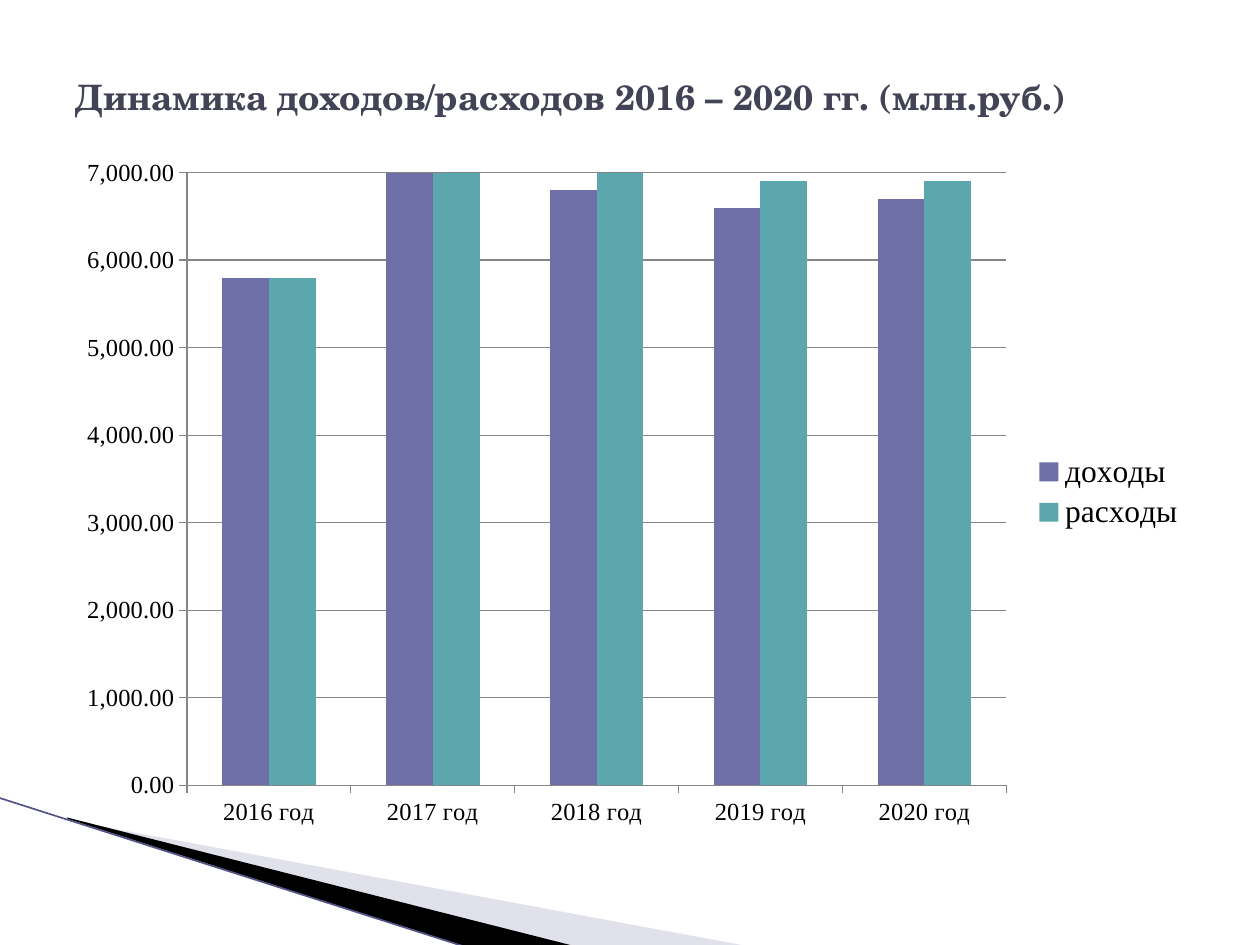
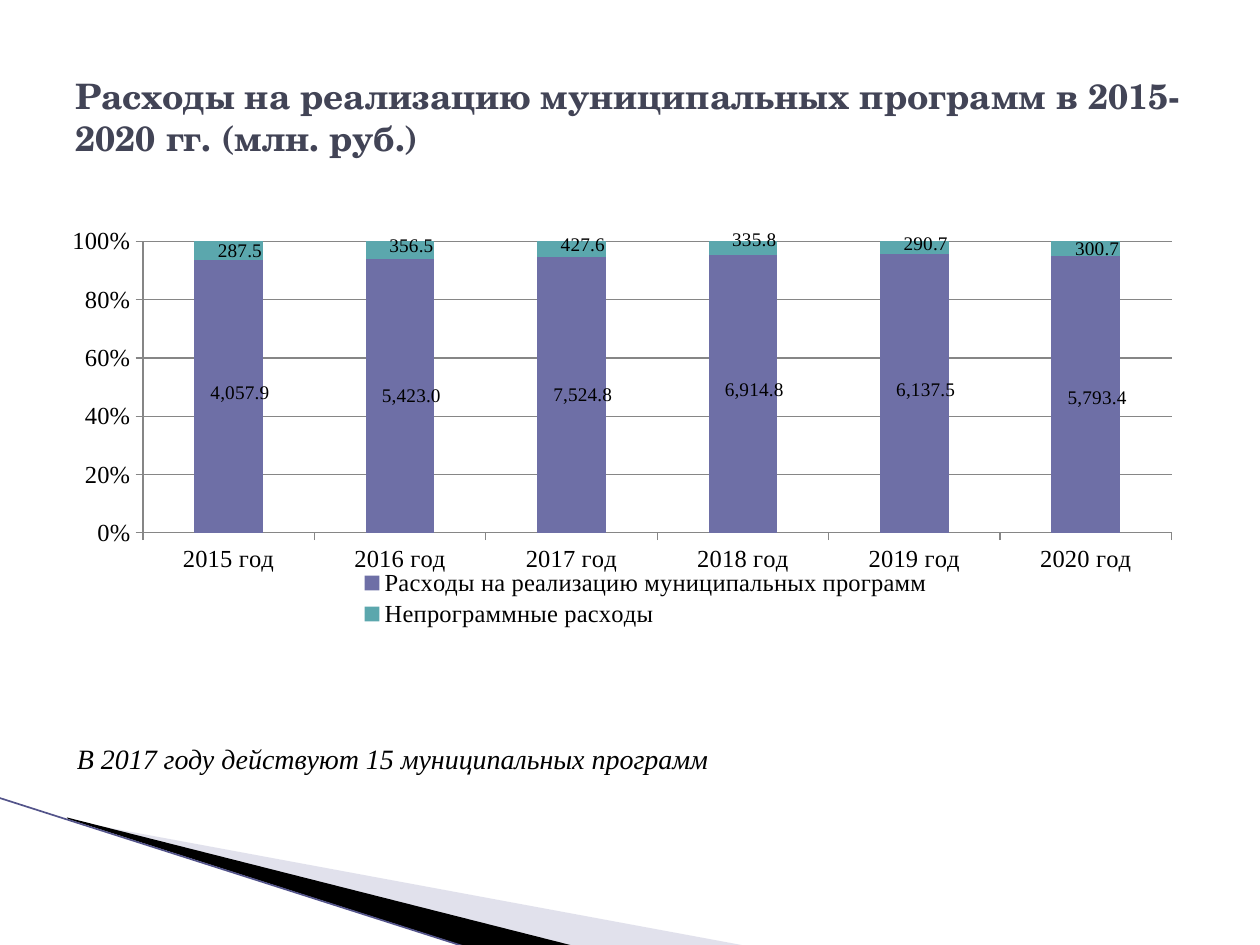
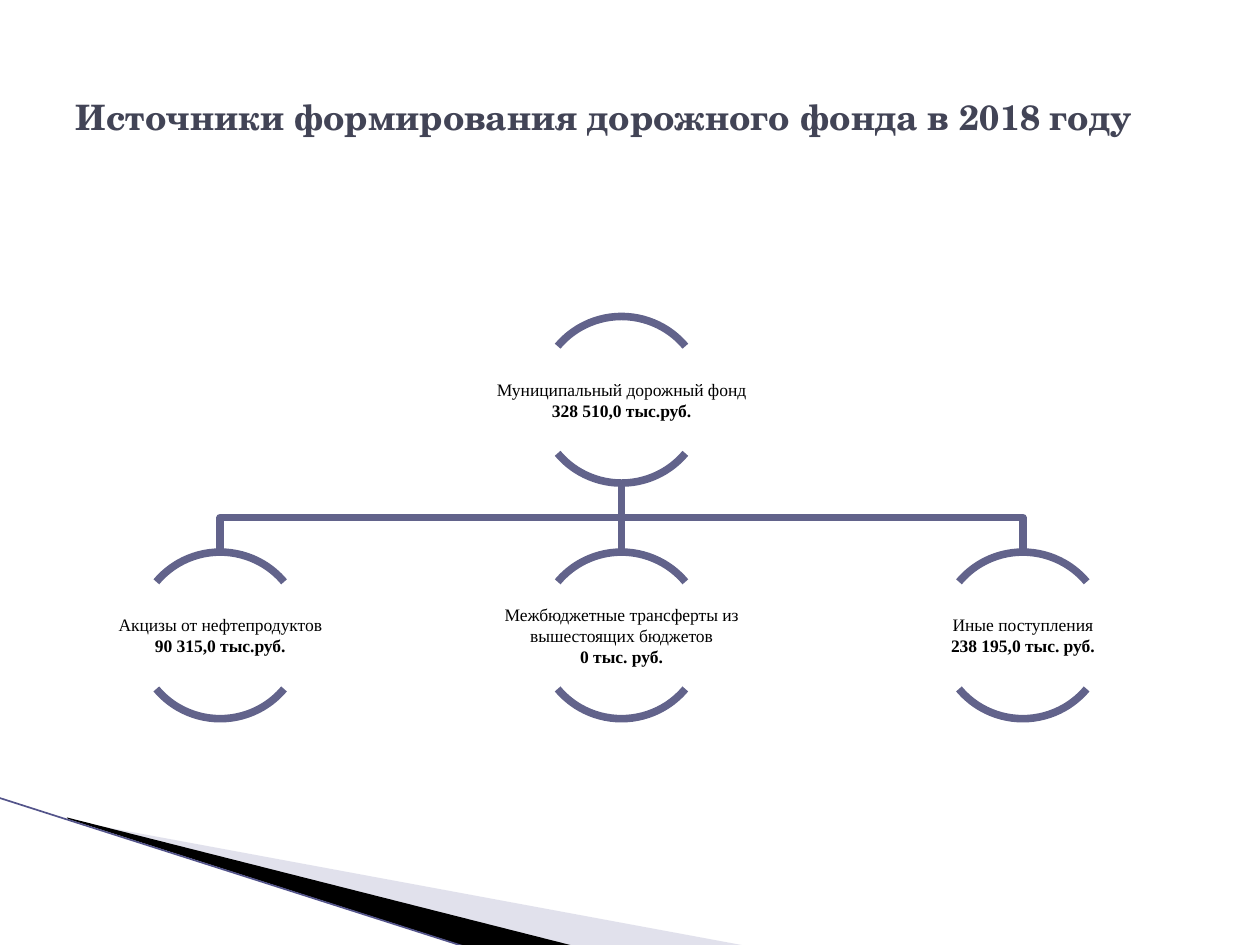
from dataclasses import dataclass
from lxml import etree
from pptx import Presentation
from pptx import util as u
from pptx.chart.data import CategoryChartData
from pptx.dml.color import RGBColor
from pptx.enum import chart as ch, shapes, text
from pptx.oxml import parse_xml
from pptx.oxml.ns import nsdecls, qn


@dataclass(frozen=True)
class Theme:
    head: str = "TeX Gyre Schola"
    body: str = "Times New Roman"
    title: RGBColor = RGBColor(0x42, 0x44, 0x56)
    ink: RGBColor = RGBColor(0, 0, 0)
    bars: tuple = (RGBColor(0x6E, 0x6F, 0xA6), RGBColor(0x5B, 0xA7, 0xAD))
    grid: RGBColor = RGBColor(0x86, 0x86, 0x86)
    tree: RGBColor = RGBColor(0x62, 0x63, 0x8B)
    pale: RGBColor = RGBColor(0xB6, 0xB6, 0xD1)
    edge: RGBColor = RGBColor(0x53, 0x54, 0x8A)
    big: int = 20
    key: int = 18
    note: int = 16
    axis: int = 14
    label: int = 11
    small: int = 10


T = Theme()
Cm, Pt = u.Cm, u.Pt


def style(font, size, color=T.ink, **more):
    form = {"name": T.body, "size": Pt(size), "bold": False, "italic": False} | more
    for key, val in form.items():
        setattr(font, key, val)
    font.color.rgb = color


def place(x, y, w, h):
    """Layout of a chart part, in shares of the chart."""
    vals = {"x": x, "y": y, "w": w, "h": h}
    parts = "".join(f'<c:{k}Mode val="edge"/>' for k in "xy")
    parts += "".join(f'<c:{k} val="{v}"/>' for k, v in vals.items())
    return parse_xml(f'<c:layout {nsdecls("c")}><c:manualLayout>{parts}'
                     "</c:manualLayout></c:layout>")


# Slides and titles
deck = Presentation()
deck.slide_width, deck.slide_height = Cm(25.4), Cm(19.05)
heads = [
    ("Динамика доходов/расходов 2016 – 2020 гг. (млн.руб.)", 22.63, 2.36),
    ("Расходы на реализацию муниципальных программ в 2015-2020 гг. (млн. руб.)", 22.86, 3.18),
    ("Источники формирования дорожного фонда в 2018 году", 22.86, 3.18),
]
pages = []
for words, wide, high in heads:
    page = deck.slides.add_slide(deck.slide_layouts[5])
    pages.append(page)
    box = page.shapes.title
    spot = {"left": Cm(1.27), "top": Cm(0.76), "width": Cm(wide), "height": Cm(high)}
    for key, val in spot.items():
        setattr(box, key, val)
    box.text_frame.text = words
    box.text_frame.vertical_anchor = text.MSO_ANCHOR.MIDDLE
    para = box.text_frame.paragraphs[0]
    para.alignment = text.PP_ALIGN.LEFT
    style(para.runs[0].font, T.big, T.title, name=T.head, bold=True)

# Corner wedges, shared through the master
first = pages[0].shapes
wedges = [
    (T.pale, [(1.4, 16.54), (15.11, 19.08), (11.58, 19.08), (1.4, 16.51)]),
    (T.ink, [(1.35, 16.48), (11.61, 19.08), (9.45, 19.1), (1.37, 16.51)]),
]
decor = []
for color, spots in wedges:
    spots = [(Cm(x), Cm(y)) for x, y in spots]
    pen = first.build_freeform(*spots[0])
    pen.add_line_segments(spots[1:])
    wedge = pen.convert_to_shape()
    wedge.shadow.inherit = False
    wedge.fill.solid()
    wedge.fill.fore_color.rgb = color
    wedge.line.fill.background()
    decor.append(wedge)
tint = decor[0].element.find(".//" + qn("a:srgbClr"))
etree.SubElement(tint, qn("a:alpha"), val="40000")
edge = first.add_connector(shapes.MSO_CONNECTOR.STRAIGHT,
                           Cm(-0.03), Cm(16.08), Cm(9.42), Cm(19.1))
edge.line.color.rgb, edge.line.width = T.edge, Pt(0.95)
etree.SubElement(edge.element.spPr, qn("a:effectLst"))
decor.append(edge)
for i, part in enumerate(decor):
    part.element.find(".//" + qn("p:cNvPr")).set("id", str(20 + i))
    deck.slide_master.shapes.element.insert(2 + i, part.element)

# Charts
kinds = ch.XL_CHART_TYPE
plans = [
    {"kind": kinds.COLUMN_CLUSTERED, "at": (1.3, 2.92, 22.86, 14), "years": range(2016, 2021),
     "fmt": "#,##0.00", "step": 1000, "top": 7000, "key": T.key,
     "side": ch.XL_LEGEND_POSITION.RIGHT,
     "rows": {"доходы": (5800, 7100, 6800, 6600, 6700),
              "расходы": (5800, 8000, 7300, 6900, 6900)}},
    {"kind": kinds.COLUMN_STACKED_100, "at": (1.27, 4.45, 23.04, 8.28), "years": range(2015, 2021),
     "fmt": "0%", "step": 0.2, "top": 1, "key": T.axis,
     "side": ch.XL_LEGEND_POSITION.BOTTOM,
     "rows": {"Расходы на реализацию муниципальных программ":
              (4057.9, 5423, 7524.8, 6914.8, 6137.5, 5793.4),
              "Непрограммные расходы": (287.5, 356.5, 427.6, 335.8, 290.7, 300.7)}},
]
charts = []
for page, plan in zip(pages, plans):
    data = CategoryChartData(number_format="#,##0.0")
    data.categories = [f"{year} год" for year in plan["years"]]
    for name, vals in plan["rows"].items():
        data.add_series(name, vals)
    spot = [Cm(n) for n in plan["at"]]
    chart = page.shapes.add_chart(plan["kind"], *spot, data).chart
    charts.append(chart)
    chart.has_title = False
    style(chart.font, plan["key"])
    chart.has_legend = True
    chart.legend.position = plan["side"]
    chart.legend.include_in_layout = False
    style(chart.legend.font, plan["key"])
    for axis in (chart.category_axis, chart.value_axis):
        axis.major_tick_mark = ch.XL_TICK_MARK.OUTSIDE
        axis.format.line.color.rgb = T.grid
        style(axis.tick_labels.font, T.axis)
    scale = {"minimum_scale": 0, "maximum_scale": plan["top"],
             "major_unit": plan["step"], "has_major_gridlines": True}
    for key, val in scale.items():
        setattr(axis, key, val)
    axis.major_gridlines.format.line.color.rgb = T.grid
    axis.tick_labels.number_format = plan["fmt"]
    axis.tick_labels.number_format_is_linked = False
    plot = chart.plots[0]
    plot.gap_width, plot.vary_by_categories = 150, False
    for row, color in zip(plot.series, T.bars):
        row.format.fill.solid()
        row.format.fill.fore_color.rgb = color
        row.invert_if_negative = False

# Plot area, legend and value labels of the stacked chart
chart = charts[1]
area = chart.element.find(".//" + qn("c:plotArea"))
for old in area.findall(qn("c:layout")):
    area.remove(old)
frame = place(0.07, 0.05, 0.9, 0.71)
frame[0].insert(0, parse_xml(f'<c:layoutTarget {nsdecls("c")} val="inner"/>'))
area.insert(0, frame)
key = chart.element.find(".//" + qn("c:legend"))
for old in key.findall(qn("c:layout")):
    key.remove(old)
key.find(qn("c:legendPos")).addnext(place(0.25, 0.84, 0.52, 0.16))
lifts = [(-0.01, 0, 0, -0.01, -0.01, 0.01), (0, -0.01, -0.01, -0.02, -0.01, 0)]
for row, lift in zip(chart.plots[0].series, lifts):
    tags = row.data_labels
    tags.show_value = True
    tags.number_format, tags.number_format_is_linked = "#,##0.0", False
    style(tags.font, T.label)
    for i in range(len(lift)):
        style(row.points[i].data_label.font, T.label)
    for tag, dy in zip(row.format.fill and tags._element.findall(qn("c:dLbl")), lift):
        tag.find(qn("c:idx")).addnext(parse_xml(
            f'<c:layout {nsdecls("c")}><c:manualLayout><c:x val="0.01"/>'
            f'<c:y val="{dy}"/></c:manualLayout></c:layout>'))

# Remark under the stacked chart
note = pages[1].shapes.add_textbox(Cm(1.3), Cm(14.83), Cm(23.6), Cm(0.94)).text_frame
note.word_wrap = True
note.auto_size = text.MSO_AUTO_SIZE.SHAPE_TO_FIT_TEXT
note.text = "В 2017 году действуют 15 муниципальных программ"
note.paragraphs[0].alignment = text.PP_ALIGN.JUSTIFY
style(note.paragraphs[0].runs[0].font, T.note, italic=True)

# Tree of road fund sources: branches
tree = pages[2].shapes
mid, step, size = 12.53, 8.09, 3.36
high, low = 6.38, 11.13
start, bend = high + size, (high + size + low) / 2
trunk = tree.add_connector(shapes.MSO_CONNECTOR.STRAIGHT,
                           Cm(mid), Cm(start), Cm(mid), Cm(low))
etree.SubElement(trunk.element.spPr, qn("a:effectLst"))
lines = [trunk]
for x in (mid + step, mid - step):
    pen = tree.build_freeform(Cm(mid), Cm(start))
    pen.add_line_segments([(Cm(mid), Cm(bend)), (Cm(x), Cm(bend)), (Cm(x), Cm(low))],
                          close=False)
    lines.append(pen.convert_to_shape())

# Tree nodes: two arcs around a label
nodes = [
    (mid, high, "Муниципальный дорожный фонд", "328 510,0 тыс.руб."),
    (mid - step, low, "Акцизы от нефтепродуктов", "90 315,0 тыс.руб."),
    (mid, low, "Межбюджетные трансферты из вышестоящих бюджетов", "0 тыс. руб."),
    (mid + step, low, "Иные поступления", "238 195,0 тыс. руб."),
]
for x, y, name, sum_ in nodes:
    for ends in ((132, 192), (24, 84)):
        arc = tree.add_shape(shapes.MSO_SHAPE.ARC, Cm(x - size / 2), Cm(y), Cm(size), Cm(size))
        arc.adjustments[0], arc.adjustments[1] = ends
        lines.append(arc)
    box = tree.add_textbox(Cm(x - 3.34), Cm(y + 0.61), Cm(6.68), Cm(2.14)).text_frame
    form = {"word_wrap": True, "vertical_anchor": text.MSO_ANCHOR.MIDDLE}
    form |= {f"margin_{side}": Cm(0.02) for side in ("left", "right", "top", "bottom")}
    for key, val in form.items():
        setattr(box, key, val)
    box.text = f"{name}\n{sum_}"
    for para, bold in zip(box.paragraphs, (False, True)):
        para.alignment = text.PP_ALIGN.CENTER
        style(para.runs[0].font, T.small, bold=bold)
for line in lines:
    line.line.color.rgb, line.line.width = T.tree, Pt(4.33)
    if line is not trunk:
        line.fill.background()
        line.shadow.inherit = False

deck.save("out.pptx")
